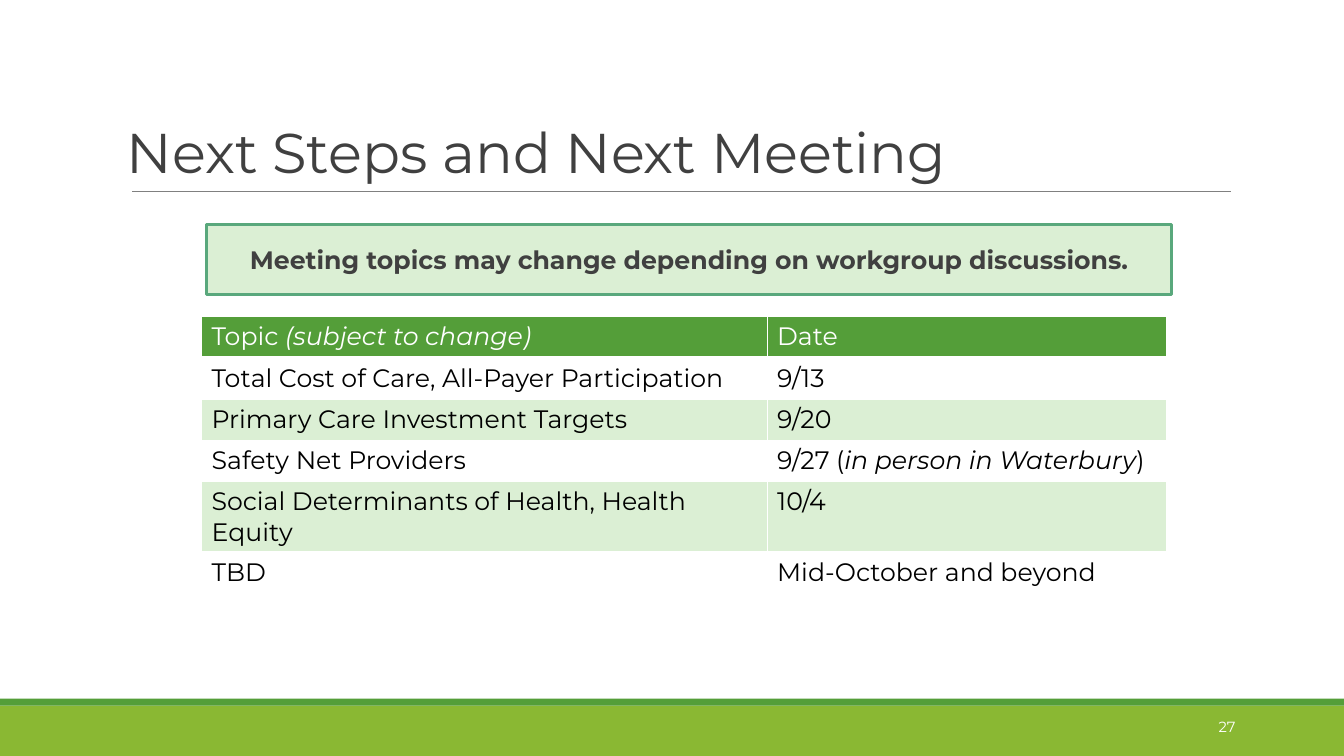
from dataclasses import dataclass

from lxml import etree
from pptx import Presentation
from pptx.dml.color import RGBColor
from pptx.enum.shapes import MSO_CONNECTOR, MSO_SHAPE
from pptx.enum.text import MSO_ANCHOR, PP_ALIGN
from pptx.oxml.ns import qn
from pptx.util import Inches, Pt

RECT = MSO_SHAPE.RECTANGLE
STRAIGHT = MSO_CONNECTOR.STRAIGHT
MIDDLE = MSO_ANCHOR.MIDDLE
LEFT, CENTER = PP_ALIGN.LEFT, PP_ALIGN.CENTER
WIDTH, HEIGHT = Inches(13.333), Inches(7.5)


@dataclass(frozen=True)
class Theme:
    font: str = "Montserrat"
    title_size: float = 40
    body_size: float = 18
    number_size: float = 10.5
    white: str = "FFFFFF"
    black: str = "000000"
    ink: str = "404040"
    rule: str = "808080"
    green: str = "549E39"
    lime: str = "8AB833"
    pale: str = "DBEFD4"
    teal: str = "59A87C"


THEME = Theme()

# Each cell is a list of (text, italic) runs
SCHEDULE = [
    ([("Topic ", False), ("(subject to change)", True)], [("Date", False)]),
    ([("Total Cost of Care, All-Payer Participation", False)], [("9/13", False)]),
    ([("Primary Care Investment Targets", False)], [("9/20", False)]),
    ([("Safety Net Providers", False)],
     [("9/27 (", False), ("in person in Waterbury", True), (")", False)]),
    ([("Social Determinants of Health, Health Equity", False)], [("10/4", False)]),
    ([("TBD", False)], [("Mid-October and beyond", False)]),
]
COLUMN_SHARES = (42.08, 29.7)
ROW_SHARE = 5.45
TALL_ROW, TALL_SHARE = 4, 9.3


def across(share):
    """Percent of the slide's width."""
    return round(WIDTH * share / 100)


def down(share):
    """Percent of the slide's height."""
    return round(HEIGHT * share / 100)


def box(x, y, w, h):
    return across(x), down(y), across(w), down(h)


def color(value):
    return RGBColor.from_string(value)


def write(tf, runs, *, size=THEME.body_size, ink=THEME.black, bold=False,
          align=LEFT, spacing=None):
    """Fill a text frame with one paragraph of (text, italic) runs."""
    p = tf.paragraphs[0]
    p.alignment = align
    if spacing:
        p.line_spacing = spacing
    for text, italic in runs:
        r = p.add_run()
        r.text = text
        r.font.name = THEME.font
        r.font.size = Pt(size)
        r.font.bold = bold
        r.font.italic = italic
        r.font.color.rgb = color(ink)


def add_text(s, area, text, **style):
    tf = s.shapes.add_textbox(*area).text_frame
    tf.word_wrap = True
    tf.vertical_anchor = MIDDLE
    write(tf, [(text, False)], **style)


def add_panel(s, area, fill, line=None, width=2.25):
    sp = s.shapes.add_shape(RECT, *area)
    sp.shadow.inherit = False
    sp.fill.solid()
    sp.fill.fore_color.rgb = color(fill)
    if line:
        sp.line.color.rgb = color(line)
        sp.line.width = Pt(width)
    else:
        sp.line.fill.background()
    return sp


def add_rule(s, x1, x2, y):
    line = s.shapes.add_connector(STRAIGHT, across(x1), down(y), across(x2), down(y))
    line.line.color.rgb = color(THEME.rule)
    line.line.width = Pt(0.5)
    etree.SubElement(line._element.spPr, qn("a:effectLst"))


def set_borders(cell, bottom):
    """White borders; they come before the fill in the cell properties."""
    tcPr = cell._tc.get_or_add_tcPr()
    for i, (side, width) in enumerate((("L", 1), ("R", 1), ("T", 1), ("B", bottom))):
        ln = etree.Element(qn(f"a:ln{side}"), w=str(Pt(width)))
        fill = etree.SubElement(ln, qn("a:solidFill"))
        etree.SubElement(fill, qn("a:srgbClr"), val=THEME.white)
        tcPr.insert(i, ln)


def add_schedule(s, x, y):
    heights = [TALL_SHARE if i == TALL_ROW else ROW_SHARE for i in range(len(SCHEDULE))]
    area = box(x, y, sum(COLUMN_SHARES), sum(heights))
    table = s.shapes.add_table(len(SCHEDULE), len(COLUMN_SHARES), *area).table
    for column, share in zip(table.columns, COLUMN_SHARES):
        column.width = across(share)
    for i, (row, height) in enumerate(zip(SCHEDULE, heights)):
        header = i == 0
        table.rows[i].height = down(height)
        for j, runs in enumerate(row):
            cell = table.cell(i, j)
            if header or i % 2 == 0:
                cell.fill.solid()
                cell.fill.fore_color.rgb = color(THEME.green if header else THEME.pale)
            else:
                cell.fill.background()
            set_borders(cell, bottom=3 if header else 1)
            write(cell.text_frame, runs, ink=THEME.white if header else THEME.black)


def main():
    prs = Presentation()
    prs.slide_width, prs.slide_height = WIDTH, HEIGHT
    s = prs.slides.add_slide(prs.slide_layouts[6])

    # Footer bands
    add_panel(s, box(0, 93.33, 100, 6.67), THEME.lime)
    add_panel(s, box(0, 92.4, 100, 0.93), THEME.green)

    # Title and its rule
    add_rule(s, 9.83, 91.58, 25.33)
    add_text(s, box(8.7, 16, 72.68, 9.2), "Next Steps and Next Meeting",
             size=THEME.title_size, ink=THEME.ink, spacing=0.9)

    # Notice above the schedule
    notice = add_panel(s, box(15.38, 29.73, 71.78, 9.2), THEME.pale, THEME.teal)
    notice.text_frame.word_wrap = True
    notice.text_frame.vertical_anchor = MIDDLE
    write(notice.text_frame,
          [("Meeting topics may change depending on workgroup discussions.", False)],
          ink=THEME.ink, bold=True, align=CENTER)

    # Meeting schedule
    add_schedule(s, 15, 41.87)

    # Slide number
    add_text(s, box(89.93, 93.73, 3.23, 4.8), "27",
             size=THEME.number_size, ink=THEME.white)

    prs.save("out.pptx")


if __name__ == "__main__":
    main()
